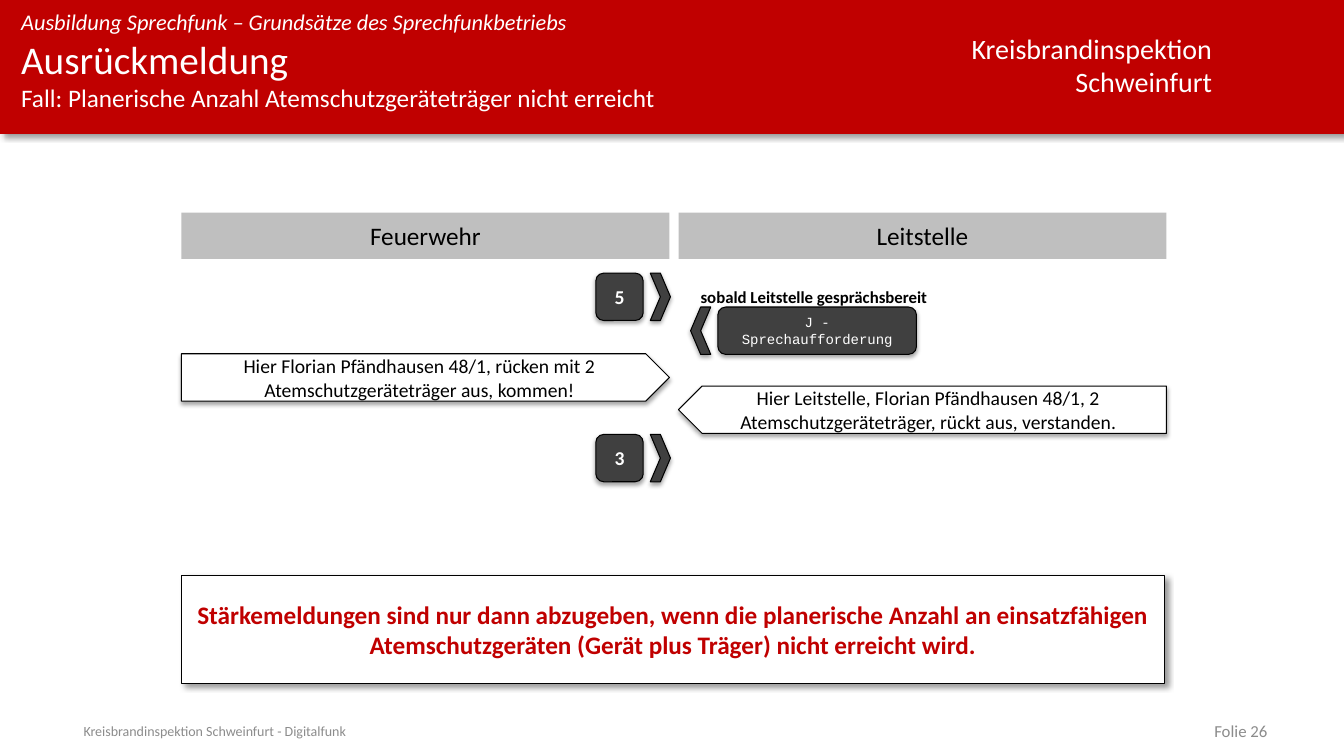
from dataclasses import dataclass
from typing import Optional

from lxml import etree
from pptx import Presentation
from pptx.dml.color import RGBColor
from pptx.enum.shapes import MSO_SHAPE
from pptx.enum.text import MSO_ANCHOR, MSO_AUTO_SIZE, PP_ALIGN
from pptx.oxml.ns import qn
from pptx.util import Inches, Pt

RECT, KEY = MSO_SHAPE.RECTANGLE, MSO_SHAPE.ROUNDED_RECTANGLE
BUBBLE, CHEVRON = MSO_SHAPE.PENTAGON, MSO_SHAPE.CHEVRON
LEFT, CENTER, RIGHT = PP_ALIGN.LEFT, PP_ALIGN.CENTER, PP_ALIGN.RIGHT
TOP, MIDDLE = MSO_ANCHOR.TOP, MSO_ANCHOR.MIDDLE
GROW = MSO_AUTO_SIZE.SHAPE_TO_FIT_TEXT


@dataclass(frozen=True)
class Theme:
    font: str = "Calibri"
    mono: str = "Courier New"
    red: str = "C00000"
    white: str = "FFFFFF"
    black: str = "000000"
    lane: str = "BFBFBF"
    key: str = "404040"
    muted: str = "8C8C8C"
    title: int = 28
    brand: int = 20
    body: int = 18
    topic: int = 16
    speech: int = 14
    note: int = 12
    small: int = 10
    outline: float = 0.75


@dataclass(frozen=True)
class Shadow:
    opacity: int
    blur: float
    distance: float
    angle: int


@dataclass(frozen=True)
class Box:
    x: float
    y: float
    w: float
    h: float


@dataclass(frozen=True)
class Style:
    size: int
    color: str
    align: PP_ALIGN = CENTER
    anchor: MSO_ANCHOR = MIDDLE
    font: str = "Calibri"
    bold: bool = False
    italic: bool = False
    wrap: bool = True
    grow: bool = False
    inset: Optional[float] = None


@dataclass(frozen=True)
class Speech:
    lane: int
    row: float
    text: str


@dataclass(frozen=True)
class KeyPress:
    lane: int
    row: float
    label: str
    width: float
    style: Style


THEME = Theme()
DROP = Shadow(40, 4, 3, 45)
SOFT = Shadow(35, 3.1, 1.8, 90)

SLIDE_W, SLIDE_H = 13.33, 7.5
LANE_X, LANE_W, LANE_GAP = 1.8, 4.84, 0.09
FIRST_ROW, ROW_STEP, ITEM_H = 2.71, 0.16, 0.47
CHEVRON_W, KEY_GAP = 0.2, 0.07
CHEVRON_OFFSETS = (4.65, 0.12)

HEADER_TEXT = Style(THEME.title, THEME.white, LEFT, TOP, inset=0)
TOPIC_TEXT = Style(THEME.topic, THEME.white, LEFT, TOP, italic=True, grow=True, inset=0)
BRAND_TEXT = Style(THEME.brand, THEME.white, RIGHT, TOP, wrap=False, grow=True)
LANE_TEXT = Style(THEME.body, THEME.black, wrap=False, inset=0.08)
SPEECH_TEXT = Style(THEME.speech, THEME.black)
DIGIT_TEXT = Style(THEME.speech, THEME.white, bold=True)
REQUEST_TEXT = Style(THEME.small, THEME.white, font=THEME.mono)
NOTE_TEXT = Style(THEME.note, THEME.black, LEFT, TOP, bold=True, wrap=False, grow=True)
RULE_TEXT = Style(THEME.body, THEME.red, bold=True)
FOOTER_TEXT = Style(THEME.small, THEME.muted, LEFT)
PAGE_TEXT = Style(THEME.note, THEME.muted, RIGHT)

LANES = ("Feuerwehr", "Leitstelle")
KEYS = (
    KeyPress(0, 0, "5", ITEM_H, DIGIT_TEXT),
    KeyPress(1, 2.1, "J - Sprechaufforderung", 1.97, REQUEST_TEXT),
    KeyPress(0, 10, "3", ITEM_H, DIGIT_TEXT),
)
SPEECHES = (
    Speech(0, 5, "Hier Florian Pfändhausen 48/1, rücken mit 2 Atemschutzgeräteträger aus, kommen!"),
    Speech(1, 7, "Hier Leitstelle, Florian Pfändhausen 48/1, 2 Atemschutzgeräteträger, rückt aus, verstanden."),
)


def lane_left(lane: int) -> float:
    return LANE_X + lane * (LANE_W + LANE_GAP)


def row_top(row: float) -> float:
    return FIRST_ROW + row * ROW_STEP


def emu(box: Box) -> list:
    return [Inches(v) for v in (box.x, box.y, box.w, box.h)]


def write(shape, text: str, style: Style) -> None:
    frame = shape.text_frame
    frame.text = text
    frame.word_wrap = style.wrap
    frame.vertical_anchor = style.anchor
    if style.grow:
        frame.auto_size = GROW
    if style.inset is not None:
        frame.margin_left = frame.margin_right = Inches(style.inset)
        frame.margin_top = frame.margin_bottom = Inches(style.inset)
    for paragraph in frame.paragraphs:
        paragraph.alignment = style.align
        font = paragraph.font
        font.name, font.size = style.font, Pt(style.size)
        font.bold, font.italic = style.bold, style.italic
        font.color.rgb = RGBColor.from_string(style.color)


def add_text(shapes, box: Box, text: str, style: Style):
    label = shapes.add_textbox(*emu(box))
    write(label, text, style)
    return label


def cast_shadow(shape, shadow: Shadow) -> None:
    effects = shape.element.spPr.find(qn("a:effectLst"))
    outer = etree.SubElement(
        effects, qn("a:outerShdw"), blurRad=str(Pt(shadow.blur)),
        dist=str(Pt(shadow.distance)), dir=str(shadow.angle * 60000),
        algn="t", rotWithShape="0")
    color = etree.SubElement(outer, qn("a:srgbClr"), val=THEME.black)
    etree.SubElement(color, qn("a:alpha"), val=str(shadow.opacity * 1000))


def add_panel(shapes, kind, box: Box, fill: str, outlined: bool = True,
              shadow: Optional[Shadow] = None, mirrored: bool = False):
    panel = shapes.add_shape(kind, *emu(box))
    panel.shadow.inherit = False
    panel.fill.solid()
    panel.fill.fore_color.rgb = RGBColor.from_string(fill)
    if outlined:
        panel.line.color.rgb = RGBColor.from_string(THEME.black)
        panel.line.width = Pt(THEME.outline)
    else:
        panel.line.fill.background()
    if shadow:
        cast_shadow(panel, shadow)
    if mirrored:
        panel.element.spPr.find(qn("a:xfrm")).set("flipH", "1")
    return panel


def add_key(shapes, key: KeyPress) -> None:
    """Draw a radio key with the chevron that points to the other lane."""
    group = shapes.add_group_shape().shapes
    y, to_left = row_top(key.row), key.lane == 1
    tip = lane_left(key.lane) + CHEVRON_OFFSETS[key.lane]
    x = tip + CHEVRON_W + KEY_GAP if to_left else tip - KEY_GAP - key.width
    cap = add_panel(group, KEY, Box(x, y, key.width, ITEM_H), THEME.key, shadow=SOFT)
    write(cap, key.label, key.style)
    add_panel(group, CHEVRON, Box(tip, y, CHEVRON_W, ITEM_H), THEME.key,
              shadow=SOFT, mirrored=to_left)


def add_speech(shapes, speech: Speech) -> None:
    box = Box(lane_left(speech.lane), row_top(speech.row), LANE_W, ITEM_H)
    bubble = add_panel(shapes, BUBBLE, box, THEME.white, shadow=SOFT, mirrored=speech.lane == 1)
    write(bubble, speech.text, SPEECH_TEXT)


def add_header(shapes) -> None:
    add_panel(shapes, RECT, Box(0, 0, SLIDE_W, 1.33), THEME.red, outlined=False, shadow=DROP)
    add_text(shapes, Box(9.51, 0.26, 2.61, 0.77), "Kreisbrandinspektion\nSchweinfurt", BRAND_TEXT)
    add_text(shapes, Box(0.21, 0.08, 8.43, 0.27),
             "Ausbildung Sprechfunk – Grundsätze des Sprechfunkbetriebs", TOPIC_TEXT)
    title = add_text(
        shapes, Box(0.21, 0.35, 8.43, 0.99),
        "Ausrückmeldung\vFall: Planerische Anzahl Atemschutzgeräteträger nicht erreicht", HEADER_TEXT)
    title.text_frame.paragraphs[0].runs[1].font.size = Pt(THEME.body)


def main() -> None:
    deck = Presentation()
    deck.slide_width, deck.slide_height = Inches(SLIDE_W), Inches(SLIDE_H)
    shapes = deck.slides.add_slide(deck.slide_layouts[6]).shapes
    add_header(shapes)
    for lane, name in enumerate(LANES):
        head = add_panel(shapes, RECT, Box(lane_left(lane), 2.11, LANE_W, 0.46), THEME.lane, outlined=False)
        write(head, name, LANE_TEXT)
    for key in KEYS:
        add_key(shapes, key)
    for speech in SPEECHES:
        add_speech(shapes, speech)
    add_text(shapes, Box(6.85, 2.8, 2.52, 0.3), "sobald Leitstelle gesprächsbereit", NOTE_TEXT)
    rule = add_panel(shapes, RECT, Box(LANE_X, 5.71, 9.75, 1.07), THEME.white, shadow=DROP)
    write(rule, "Stärkemeldungen sind nur dann abzugeben, wenn die planerische Anzahl an einsatzfähigen "
          "Atemschutzgeräten (Gerät plus Träger) nicht erreicht wird.", RULE_TEXT)
    add_text(shapes, Box(0.73, 7.15, 8.05, 0.2), "Kreisbrandinspektion Schweinfurt - Digitalfunk", FOOTER_TEXT)
    add_text(shapes, Box(9.56, 7.15, 3.11, 0.2), "Folie 26", PAGE_TEXT)
    deck.save("out.pptx")


if __name__ == "__main__":
    main()
